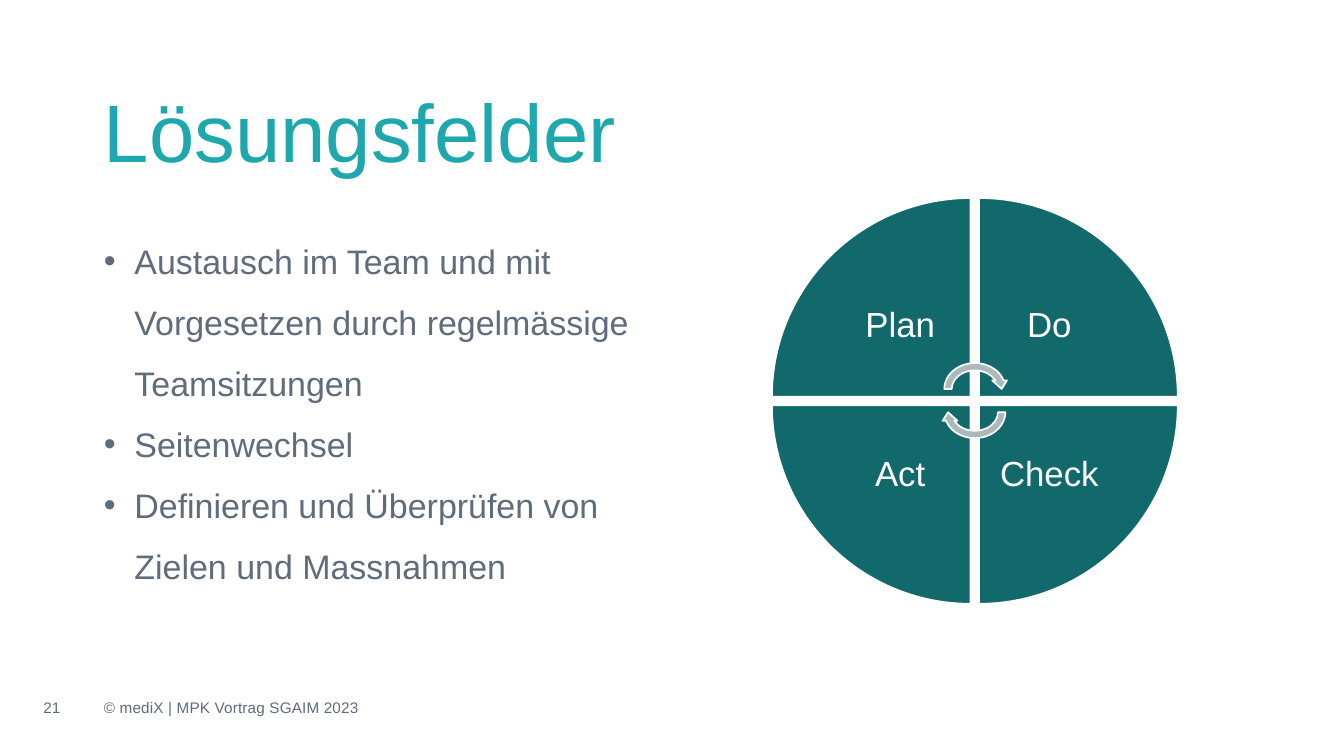
from lxml import etree
from pptx import Presentation, util as u
from pptx.dml.color import RGBColor
from pptx.enum import shapes, text
from pptx.oxml.ns import qn

SCALE = 9144  # EMU per px, 100 px to the inch
TEAL, DARK, SLATE, GREY, WHITE = "1EA7AC", "12696B", "5F6C7B", "ABB9BA", "FFFFFF"


def px(n):
    return u.Emu(n * SCALE)


def rgb(color):
    return RGBColor.from_string(color)


class Deck:
    font = "Arial"

    def __init__(self, width, height):
        self.prs = Presentation()
        self.prs.slide_width, self.prs.slide_height = px(width), px(height)
        self.s = self.prs.slides.add_slide(self.prs.slide_layouts[6])

    def run(self, p, content, size, color, spacing=0):
        r = p.add_run()
        r.text = content
        r.font.name, r.font.size = self.font, u.Pt(size)
        r.font.color.rgb = rgb(color)
        if spacing:
            r._r.get_or_add_rPr().set("spc", str(spacing))

    def bullet(self, p, indent):
        pPr = p._p.get_or_add_pPr()
        pPr.set("marL", str(px(indent)))
        pPr.set("indent", str(-px(indent)))
        etree.SubElement(pPr, qn("a:buFont"), typeface=self.font)
        etree.SubElement(pPr, qn("a:buChar"), char="•")

    def text(self, x, y, w, h, *lines, size=18, color=SLATE, middle=True,
             center=False, leading=None, indent=0, spacing=0):
        tf = self.s.shapes.add_textbox(px(x), px(y), px(w), px(h)).text_frame
        tf.word_wrap = True
        tf.margin_left = tf.margin_right = tf.margin_top = tf.margin_bottom = 0
        tf.vertical_anchor = text.MSO_ANCHOR.MIDDLE if middle else text.MSO_ANCHOR.TOP
        for i, line in enumerate(lines):
            p = tf.add_paragraph() if i else tf.paragraphs[0]
            if indent:
                self.bullet(p, indent)
            p.alignment = text.PP_ALIGN.CENTER if center else text.PP_ALIGN.LEFT
            if leading:
                p.line_spacing = leading
            self.run(p, line, size, color, spacing)

    def shape(self, kind, x, y, w, h, fill, rotation=0):
        sp = self.s.shapes.add_shape(kind, px(x), px(y), px(w), px(h))
        sp.shadow.inherit = False
        sp.rotation = rotation
        sp.fill.solid()
        sp.fill.fore_color.rgb = rgb(fill)
        sp.line.color.rgb = rgb(WHITE)
        sp.line.width = u.Pt(2)


def main():
    d = Deck(2199, 1237)

    # Title and bullets
    d.text(170, 93, 1896, 239, "Lösungsfelder", size=96, color=TEAL)
    d.text(170, 360, 937, 625,
           "Austausch im Team und mit Vorgesetzen durch regelmässige Teamsitzungen",
           "Seitenwechsel",
           "Definieren und Überprüfen von Zielen und Massnahmen",
           size=40, middle=False, leading=1.5, indent=50)

    # Footer
    d.text(170, 1146, 742, 24, "© mediX | MPK Vortrag SGAIM 2023", spacing=20)
    d.text(0, 1146, 170, 24, "21", center=True)

    # PDCA wheel: quadrants clockwise, labels towards the centre
    left, top, wedge, label, pitch = 1263, 324, 325, 230, 339
    quadrants = [("Plan", 0, 0), ("Do", 1, 0), ("Check", 1, 1), ("Act", 0, 1)]
    for i, (name, col, row) in enumerate(quadrants):
        x, y = left + col * pitch, top + row * pitch
        d.shape(shapes.MSO_SHAPE.PIE_WEDGE, x, y, wedge, wedge, DARK, 90 * i)
        inset = wedge - label
        d.text(x + inset * (1 - col), y + inset * (1 - row), label, label, name,
               size=41, color=WHITE, center=True, leading=0.9)

    # Cycle arrows
    for y, rotation in ((588, 0), (626, 180)):
        d.shape(shapes.MSO_SHAPE.CIRCULAR_ARROW, 1539, y, 112, 97, GREY, rotation)

    d.prs.save("out.pptx")


if __name__ == "__main__":
    main()
